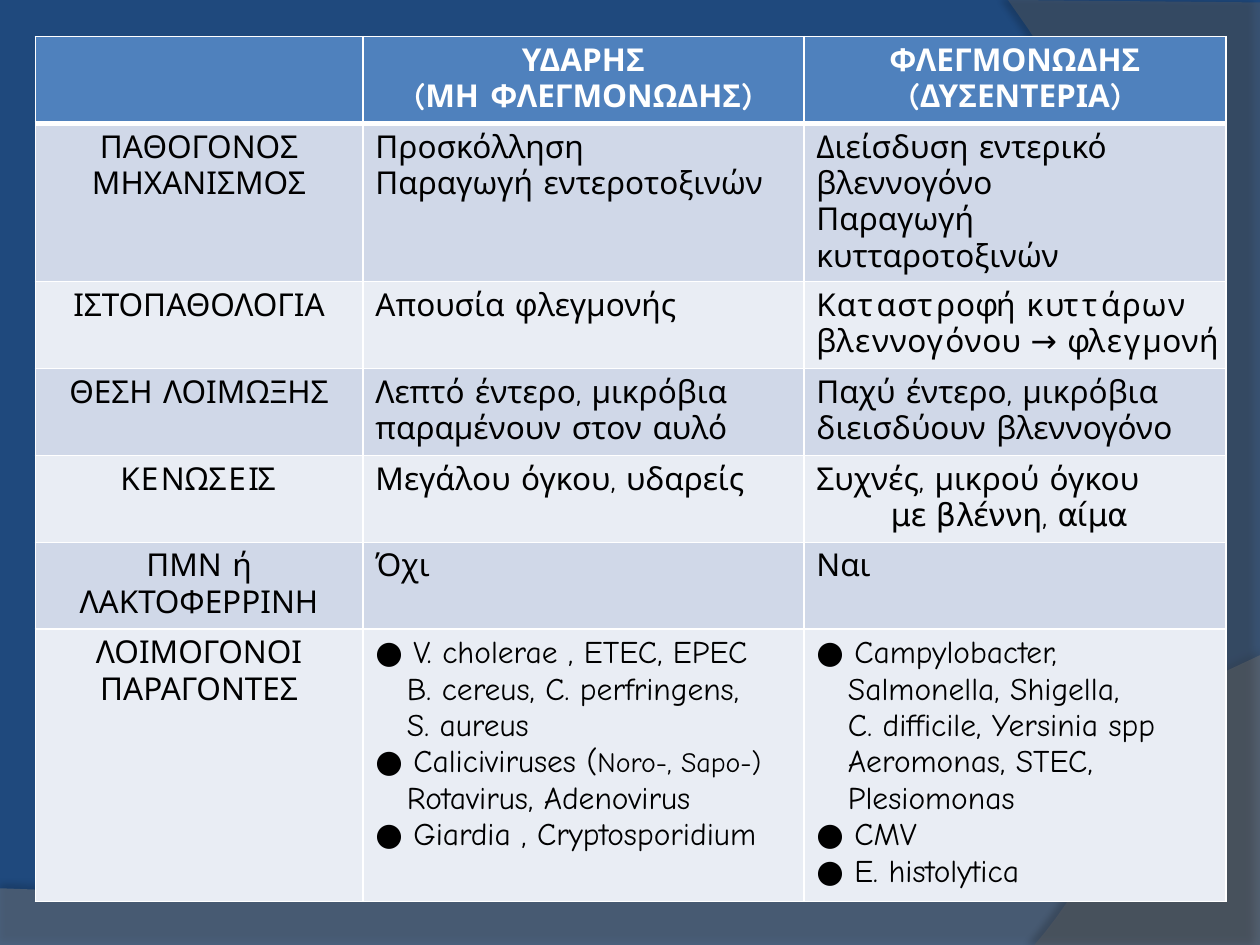
from lxml.etree import SubElement
from pptx import Presentation
from pptx.dml.color import RGBColor
from pptx.enum.lang import MSO_LANGUAGE_ID
from pptx.enum.text import PP_ALIGN
from pptx.oxml.ns import qn
from pptx.util import Inches, Pt

FONT = "Comic Neue"
COLORS = {
    "background": "1F497D", "wave": "7F7F7F", "side": "5E5E5E", "shadow": "000000",
    "header": "4F81BD", "odd": "D0D8E8", "even": "E9EDF4", "border": "FFFFFF",
    "header_text": "FFFFFF", "text": "000000",
}

# Each cell is a list of paragraphs: (style, text at 18 pt, optional text at 16 pt)
PLAIN, BULLET, CONTINUED, SHIFTED = "plain", "bullet", "continued", "shifted"
LEFT_MARGIN = {PLAIN: 0, BULLET: 0.3, CONTINUED: 0.25, SHIFTED: 0.59}
ROWS = [
    [[],
     [(PLAIN, "ΥΔΑΡΗΣ"), (PLAIN, "(ΜΗ ΦΛΕΓΜΟΝΩΔΗΣ)")],
     [(PLAIN, "ΦΛΕΓΜΟΝΩΔΗΣ (ΔΥΣΕΝΤΕΡΙΑ)")]],
    [[(PLAIN, "ΠΑΘΟΓΟΝΟΣ ΜΗΧΑΝΙΣΜΟΣ")],
     [(PLAIN, "Προσκόλληση"), (PLAIN, "Παραγωγή εντεροτοξινών")],
     [(PLAIN, "Διείσδυση εντερικό βλεννογόνο"), (PLAIN, "Παραγωγή κυτταροτοξινών")]],
    [[(PLAIN, "ΙΣΤΟΠΑΘΟΛΟΓΙΑ")],
     [(PLAIN, "Απουσία φλεγμονής")],
     [(PLAIN, "Καταστροφή κυττάρων βλεννογόνου → φλεγμονή")]],
    [[(PLAIN, "ΘΕΣΗ ΛΟΙΜΩΞΗΣ")],
     [(PLAIN, "Λεπτό έντερο, μικρόβια παραμένουν στον αυλό")],
     [(PLAIN, "Παχύ έντερο, μικρόβια διεισδύουν βλεννογόνο")]],
    [[(PLAIN, "ΚΕΝΩΣΕΙΣ")],
     [(PLAIN, "Μεγάλου όγκου, υδαρείς")],
     [(PLAIN, "Συχνές, μικρού όγκου"), (SHIFTED, "με βλέννη, αίμα")]],
    [[(PLAIN, "ΠΜΝ ή ΛΑΚΤΟΦΕΡΡΙΝΗ")],
     [(PLAIN, "Όχι")],
     [(PLAIN, "Ναι")]],
    [[(PLAIN, "ΛΟΙΜΟΓΟΝΟΙ ΠΑΡΑΓΟΝΤΕΣ")],
     [(BULLET, "V. cholerae , ETEC, EPEC"),
      (CONTINUED, "B. cereus, C. perfringens,"),
      (CONTINUED, "S. aureus"),
      (BULLET, "Caliciviruses (", "Noro-, Sapo-)"),
      (CONTINUED, "Rotavirus, Adenovirus"),
      (BULLET, "Giardia , Cryptosporidium")],
     [(BULLET, "Campylobacter,"),
      (CONTINUED, "Salmonella, Shigella,"),
      (CONTINUED, "C. difficile, Yersinia spp"),
      (CONTINUED, "Aeromonas, STEC,"),
      (CONTINUED, "Plesiomonas"),
      (BULLET, "CMV"),
      (BULLET, "E. histolytica")]],
]
COLUMN_WIDTHS = [2.6, 3.5, 3.35]
ROW_HEIGHTS = [0.69, 0.93, 0.69, 0.69, 0.69, 0.69, 2.16]
TABLE_LEFT, TABLE_TOP = 0.28, 0.29

# Curve: start, two control points, end
WAVE_CURVE = [(10, 5.2), (5.59, 7.29), (3.91, 7.19), (0, 7.05)]
WAVE_CORNERS = [(0, 7.51), (10, 7.51)]
SIDE_CURVE = [(8.21, 7.5), (9.35, 6.19), (10.18, 3), (8, 0)]
SIDE_CORNERS = [(10, 0.02), (10, 7.5)]


def rgb(name):
    return RGBColor.from_string(COLORS[name])


def bezier(points, steps=40):
    """Sample a cubic curve as a list of points."""
    for i in range(steps + 1):
        t = i / steps
        weights = ((1 - t) ** 3, 3 * t * (1 - t) ** 2, 3 * t * t * (1 - t), t ** 3)
        yield tuple(sum(w * p[axis] for w, p in zip(weights, points)) for axis in (0, 1))


def add_swoosh(slide, curve, corners, color, opacity, shadow_opacity, distance, angle):
    """Draw a translucent area bounded by a curve and straight sides."""
    points = [(Inches(x), Inches(y)) for x, y in [*bezier(curve), *corners]]
    builder = slide.shapes.build_freeform(*points[0])
    builder.add_line_segments(points[1:], close=True)
    sp = builder.convert_to_shape()
    sp.fill.solid()
    sp.fill.fore_color.rgb = rgb(color)
    sp.line.fill.background()
    sp.shadow.inherit = False
    spPr = sp.element.spPr
    fill_color = spPr.find(qn("a:solidFill")).find(qn("a:srgbClr"))
    SubElement(fill_color, qn("a:alpha"), val=str(opacity * 1000))
    shadow = SubElement(spPr.find(qn("a:effectLst")), qn("a:outerShdw"),
                        blurRad=str(Pt(4)), dist=str(Pt(distance)),
                        dir=str(angle * 60000), rotWithShape="0")
    shadow_color = SubElement(shadow, qn("a:srgbClr"), val=COLORS["shadow"])
    SubElement(shadow_color, qn("a:alpha"), val=str(shadow_opacity * 1000))


def format_paragraph(p, style, centered):
    p.alignment = PP_ALIGN.CENTER if centered else PP_ALIGN.LEFT
    margin = Inches(LEFT_MARGIN[style])
    pPr = p._p.get_or_add_pPr()
    pPr.set("marL", str(margin))
    pPr.set("indent", str(-margin if style == BULLET else 0))
    if style == BULLET:
        SubElement(pPr, qn("a:buFont"), typeface=FONT)
        SubElement(pPr, qn("a:buChar"), char="●")


def set_bottom_border(cell, width):
    tcPr = cell._tc.get_or_add_tcPr()
    ln = SubElement(tcPr, qn("a:lnB"), w=str(Pt(width)))
    SubElement(SubElement(ln, qn("a:solidFill")), qn("a:srgbClr"), val=COLORS["border"])
    tcPr.insert(0, ln)


def fill_cell(cell, paragraphs, fill, header, centered):
    cell.fill.solid()
    cell.fill.fore_color.rgb = rgb(fill)
    if header:
        set_bottom_border(cell, 3)
    if not centered:
        cell.margin_right = 0
    tf = cell.text_frame
    for i, (style, *texts) in enumerate(paragraphs):
        p = tf.add_paragraph() if i else tf.paragraphs[0]
        format_paragraph(p, style, centered)
        for text, size in zip(texts, (18, 16)):
            r = p.add_run()
            r.text = text
            r.font.name = FONT
            r.font.size = Pt(size)
            r.font.bold = header
            r.font.language_id = MSO_LANGUAGE_ID.GREEK
            r.font.color.rgb = rgb("header_text" if header else "text")


def add_comparison_table(slide):
    table = slide.shapes.add_table(
        len(ROWS), len(COLUMN_WIDTHS), Inches(TABLE_LEFT), Inches(TABLE_TOP),
        Inches(sum(COLUMN_WIDTHS)), Inches(sum(ROW_HEIGHTS))).table
    for column, width in zip(table.columns, COLUMN_WIDTHS):
        column.width = Inches(width)
    for i, (row, height) in enumerate(zip(ROWS, ROW_HEIGHTS)):
        table.rows[i].height = Inches(height)
        header = i == 0
        fill = "header" if header else "odd" if i % 2 else "even"
        for j, paragraphs in enumerate(row):
            fill_cell(table.cell(i, j), paragraphs, fill, header, header or j == 0)


def main():
    prs = Presentation()
    prs.slide_width, prs.slide_height = Inches(10), Inches(7.5)
    slide = prs.slides.add_slide(prs.slide_layouts[6])
    slide.background.fill.solid()
    slide.background.fill.fore_color.rgb = rgb("background")
    add_swoosh(slide, WAVE_CURVE, WAVE_CORNERS, "wave", 45, 35, 3.5, 270)
    add_swoosh(slide, SIDE_CURVE, SIDE_CORNERS, "side", 40, 45, 4, 180)
    add_comparison_table(slide)
    prs.save("out.pptx")


if __name__ == "__main__":
    main()
